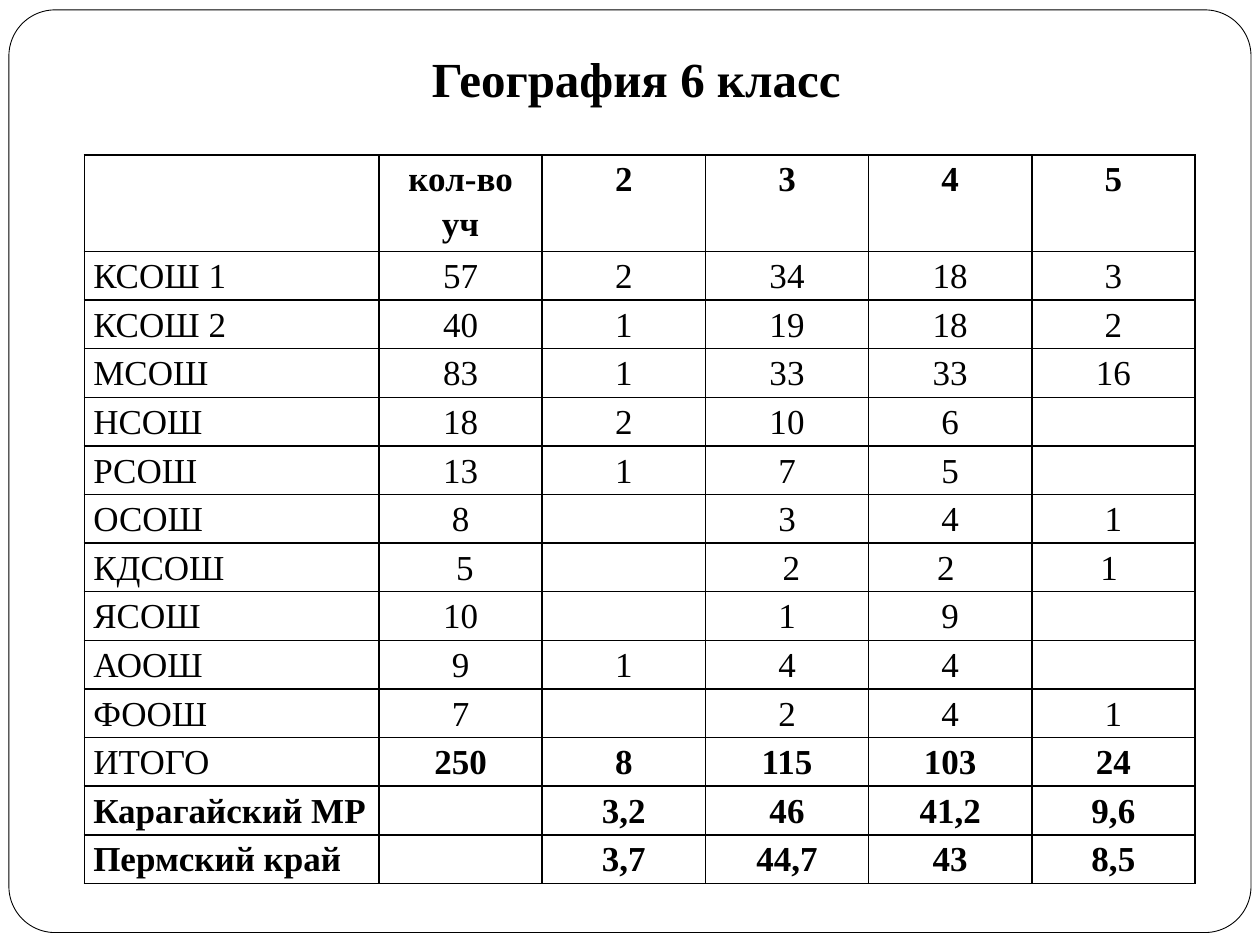
from dataclasses import dataclass
from typing import Any, NamedTuple

from lxml.etree import SubElement
from pptx import Presentation
from pptx.dml.color import RGBColor
from pptx.enum.shapes import MSO_SHAPE as Preset
from pptx.enum.text import MSO_ANCHOR as Anchor, MSO_AUTO_SIZE as AutoSize, PP_ALIGN as Align
from pptx.oxml.ns import qn
from pptx.util import Cm, Pt


@dataclass(frozen=True)
class Theme:
    font: str = "Times New Roman"
    ink: str = "000000"
    paper: str = "FFFFFF"
    title_size: float = 28
    table_size: float = 20
    frame_line: float = 0.5
    grid_line: float = 1


class Box(NamedTuple):
    left: float
    top: float
    width: float
    height: float


class ResultRow(NamedTuple):
    label: str
    values: tuple[str, ...]
    bold_label: bool = False
    bold_values: bool = False


THEME = Theme()
FRAME = Box(0.18, 0.2, 25.04, 18.6)
TITLE = Box(3.02, 0.84, 19.61, 1.45)
TABLE = Box(1.7, 3.12, 22.4, 14.65)
LABEL_WIDTH, VALUE_WIDTH = 5.94, 3.29
HEADER_HEIGHT, ROW_HEIGHT = 1.94, 0.98

ROWS = [
    ResultRow("", ("кол-во уч", "2", "3", "4", "5"), True, True),
    ResultRow("КСОШ 1", ("57", "2", "34", "18", "3")),
    ResultRow("КСОШ 2", ("40", "1", "19", "18", "2")),
    ResultRow("МСОШ", ("83", "1", "33", "33", "16")),
    ResultRow("НСОШ", ("18", "2", "10", "6", "")),
    ResultRow("РСОШ", ("13", "1", "7", "5", "")),
    ResultRow("ОСОШ", ("8", "", "3", "4", "1")),
    ResultRow("КДСОШ", (" 5", "", " 2", "2 ", "1 ")),
    ResultRow("ЯСОШ", ("10", "", "1", "9", "")),
    ResultRow("АООШ", ("9", "1", "4", "4", "")),
    ResultRow("ФООШ", ("7", "", "2", "4", "1")),
    ResultRow("ИТОГО", ("250", "8", "115", "103", "24"), False, True),
    ResultRow("Карагайский МР", ("", "3,2", "46", "41,2", "9,6"), True, True),
    ResultRow("Пермский край", ("", "3,7", "44,7", "43", "8,5"), True, True),
]


def apply(target: Any, values: dict[str, Any]) -> None:
    for name, value in values.items():
        setattr(target, name, value)


def lengths(box: Box) -> dict[str, Any]:
    return {name: Cm(value) for name, value in box._asdict().items()}


def write(paragraph: Any, text: str, size: float, bold: bool, align: Any) -> None:
    paragraph.alignment = align
    if text:
        run = paragraph.add_run()
        run.text = text
        apply(run.font, {"name": THEME.font, "size": Pt(size), "bold": bold})
        run.font.color.rgb = RGBColor.from_string(THEME.ink)


def draw_frame(slide: Any) -> None:
    shape = slide.shapes.add_shape(Preset.ROUNDED_RECTANGLE, *lengths(FRAME).values())
    shape.adjustments[0] = 0.05
    shape.shadow.inherit = False
    shape.fill.solid()
    shape.fill.fore_color.rgb = RGBColor.from_string(THEME.paper)
    shape.line.color.rgb = RGBColor.from_string(THEME.ink)
    shape.line.width = Pt(THEME.frame_line)
    slide.shapes.title.element.addprevious(shape.element)


def draw_title(slide: Any, text: str) -> None:
    title = slide.shapes.title
    apply(title, lengths(TITLE))
    apply(title.text_frame, {
        "word_wrap": True,
        "vertical_anchor": Anchor.MIDDLE,
        "auto_size": AutoSize.SHAPE_TO_FIT_TEXT,
    })
    write(title.text_frame.paragraphs[0], text, THEME.title_size, True, Align.CENTER)


def draw_borders(cell: Any) -> None:
    properties = cell._tc.get_or_add_tcPr()
    for side in ("lnL", "lnR", "lnT", "lnB"):
        line = SubElement(properties, qn(f"a:{side}"), w=str(Pt(THEME.grid_line)))
        fill = SubElement(line, qn("a:solidFill"))
        SubElement(fill, qn("a:srgbClr"), val=THEME.ink)


def draw_cell(cell: Any, text: str, bold: bool, align: Any) -> None:
    apply(cell, {
        "margin_left": Cm(0.18),
        "margin_right": Cm(0.18),
        "margin_top": 0,
        "margin_bottom": 0,
    })
    draw_borders(cell)
    cell.fill.background()
    paragraph = cell.text_frame.paragraphs[0]
    paragraph.line_spacing = 1.15
    write(paragraph, text, THEME.table_size, bold, align)


def draw_table(slide: Any, rows: list[ResultRow]) -> None:
    column_count = 1 + len(rows[0].values)
    table = slide.shapes.add_table(len(rows), column_count, *lengths(TABLE).values()).table
    apply(table, {"first_row": False, "horz_banding": False})
    for index, column in enumerate(table.columns):
        column.width = Cm(VALUE_WIDTH if index else LABEL_WIDTH)
    for index, row in enumerate(rows):
        table.rows[index].height = Cm(ROW_HEIGHT if index else HEADER_HEIGHT)
        draw_cell(table.cell(index, 0), row.label, row.bold_label, Align.LEFT)
        for position, value in enumerate(row.values, start=1):
            draw_cell(table.cell(index, position), value, row.bold_values, Align.CENTER)


def main() -> None:
    presentation = Presentation()
    apply(presentation, {"slide_width": Cm(25.4), "slide_height": Cm(19.05)})
    slide = presentation.slides.add_slide(presentation.slide_layouts[5])
    draw_frame(slide)
    draw_title(slide, "География 6 класс")
    draw_table(slide, ROWS)
    presentation.save("out.pptx")


if __name__ == "__main__":
    main()
